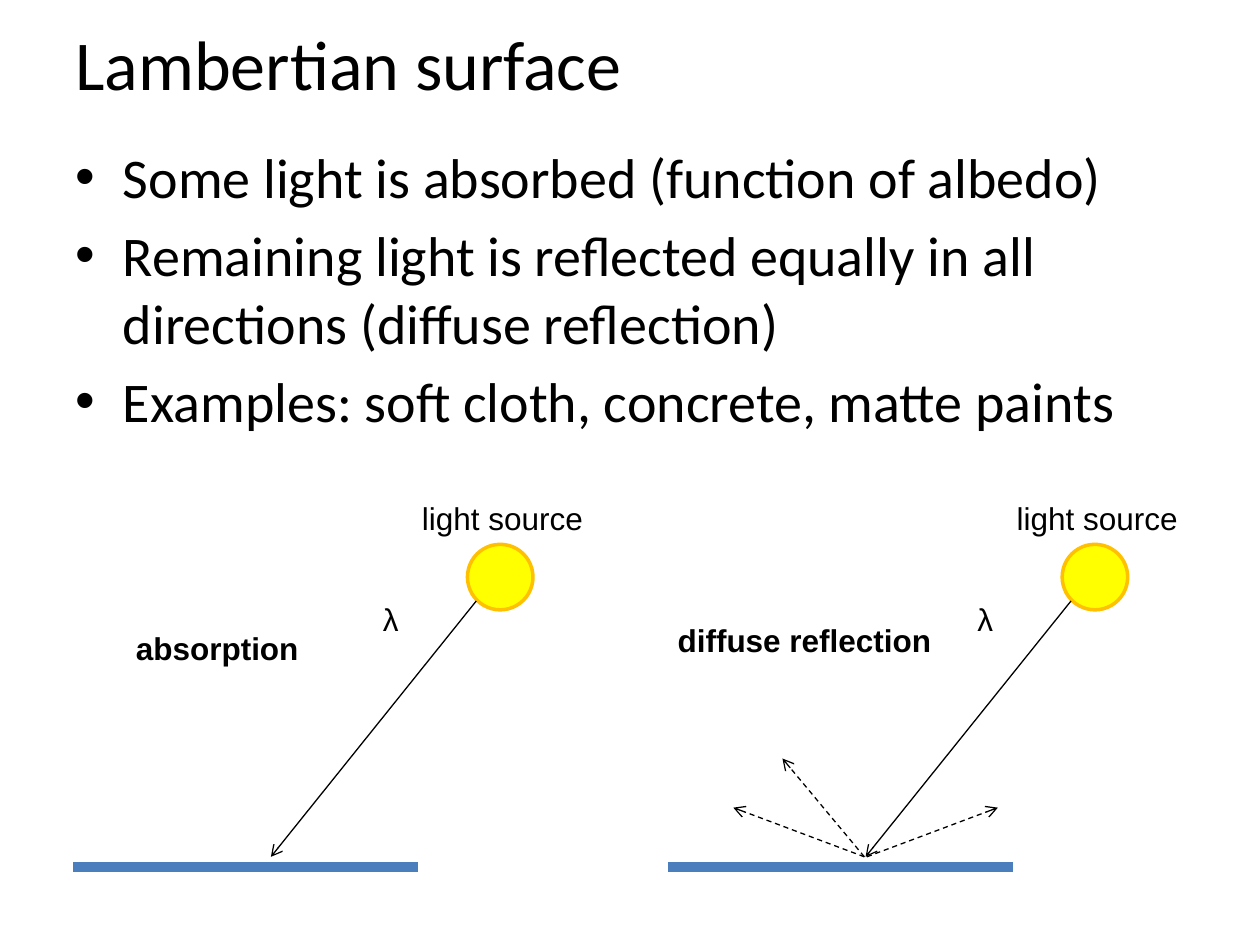
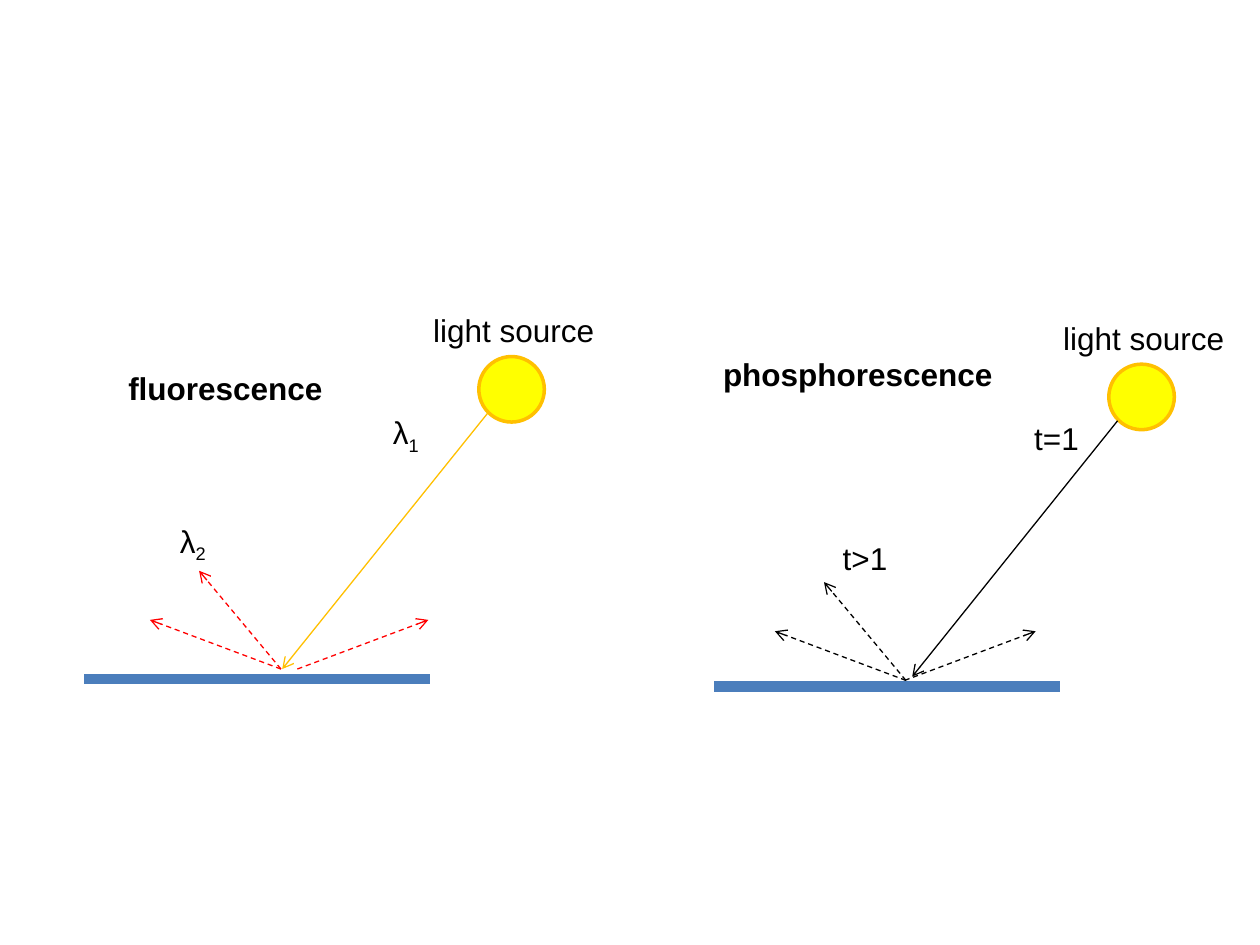
from lxml.etree import SubElement
from pptx import Presentation
from pptx.dml.color import RGBColor
from pptx.enum.dml import MSO_LINE
from pptx.enum.shapes import MSO_CONNECTOR, MSO_SHAPE
from pptx.enum.text import MSO_ANCHOR, PP_ALIGN
from pptx.oxml.ns import qn
from pptx.util import Inches, Pt

BLACK = RGBColor(0x00, 0x00, 0x00)
RED = RGBColor(0xFF, 0x00, 0x00)
AMBER = RGBColor(0xFF, 0xC0, 0x00)
YELLOW = RGBColor(0xFF, 0xFF, 0x00)
BLUE = RGBColor(0x4B, 0x7E, 0xBC)

TITLE_ONLY_BODY, BLANK = 1, 6


class Deck:
    """Holds the shared style and draws elements on the current slide."""

    def __init__(self):
        self.prs = Presentation()
        self.prs.slide_width, self.prs.slide_height = Inches(10), Inches(7.5)
        self.s = None

    def add_slide(self, layout):
        self.s = self.prs.slides.add_slide(self.prs.slide_layouts[layout])

    def style(self, p, size, font, bold=False):
        for r in p.runs:
            r.font.size, r.font.name, r.font.bold = Pt(size), font, bold
            r.font.color.rgb = BLACK

    def place(self, sp, x, y, w, h):
        sp.left, sp.top, sp.width, sp.height = map(Inches, (x, y, w, h))

    def title(self, text):
        sp = self.s.shapes.title
        self.place(sp, 0.5, 0, 9, 1)
        tf = sp.text_frame
        tf.text = text
        tf.vertical_anchor = MSO_ANCHOR.MIDDLE
        p = tf.paragraphs[0]
        p.alignment = PP_ALIGN.LEFT
        self.style(p, 40, "Calibri")

    def bullets(self, items):
        sp = self.s.placeholders[1]
        self.place(sp, 0.5, 1.08, 9, 5.62)
        tf = sp.text_frame
        tf.text = "\n".join(items)
        tf.paragraphs[0].space_before = Pt(0)
        for p in tf.paragraphs:
            self.style(p, 32, "Calibri")

    def label(self, text, x, y, w, bold=False, sub=""):
        sp = self.s.shapes.add_textbox(*map(Inches, (x, y, w, 0.4)))
        tf = sp.text_frame
        tf.word_wrap = False
        p = tf.paragraphs[0]
        p.text = text
        if sub:
            r = p.add_run()
            r.text = sub
            r._r.get_or_add_rPr().set("baseline", "-25000")
        self.style(p, 18, "Arial", bold)

    def line(self, start, end, color, width):
        sp = self.s.shapes.add_connector(
            MSO_CONNECTOR.STRAIGHT, *map(Inches, (*start, *end)))
        sp.line.color.rgb, sp.line.width = color, Pt(width)
        SubElement(sp._element.spPr, qn("a:effectLst"))
        return sp

    def arrow(self, start, end, color=BLACK, dashed=False):
        sp = self.line(start, end, color, 0.75)
        if dashed:
            sp.line.dash_style = MSO_LINE.DASH
        SubElement(sp.line._get_or_add_ln(), qn("a:tailEnd"), type="arrow")

    def sun(self, x, y):
        sp = self.s.shapes.add_shape(
            MSO_SHAPE.OVAL, *map(Inches, (x, y, 0.52, 0.52)))
        sp.shadow.inherit = False
        sp.fill.solid()
        sp.fill.fore_color.rgb = YELLOW
        sp.line.color.rgb, sp.line.width = AMBER, Pt(2)

    def lit_surface(self, x, y, ray=BLACK):
        self.line((x, y), (x + 2.74, y), BLUE, 6)
        self.sun(x + 3.13, y - 2.56)
        self.arrow((x + 3.2, y - 2.11), (x + 1.57, y - 0.08), ray)
        self.label("light source", x + 2.67, y - 2.97, 1.5)

    def reflections(self, x, y, shift, color=BLACK):
        for offset, dx, dy in ((0, -0.65, -0.78), (0, -1.04, -0.39),
                               (shift, 1.04, -0.39)):
            start = x + offset
            self.arrow((start, y), (start + dx, y + dy), color, dashed=True)


def main():
    deck = Deck()

    deck.add_slide(TITLE_ONLY_BODY)
    deck.title("Lambertian surface")
    deck.bullets([
        "Some light is absorbed (function of albedo)",
        "Remaining light is reflected equally in all directions "
        "(diffuse reflection)",
        "Examples: soft cloth, concrete, matte paints",
    ])
    for x in (0.58, 5.3):
        deck.lit_surface(x, 6.88)
        deck.label("λ", x + 2.36, 4.71, 0.34)
    deck.reflections(6.86, 6.8, 0.02)
    deck.label("absorption", 0.98, 4.94, 1.51, bold=True)
    deck.label("diffuse reflection", 5.28, 4.88, 2.24, bold=True)

    deck.add_slide(BLANK)
    deck.lit_surface(0.67, 5.39, AMBER)
    deck.reflections(2.23, 5.31, 0.13, RED)
    deck.label("λ", 3.02, 3.23, 0.42, sub="1")
    deck.label("λ", 1.33, 4.09, 0.42, sub="2")
    deck.label("fluorescence", 0.92, 2.88, 1.76, bold=True)
    deck.lit_surface(5.67, 5.45)
    deck.reflections(7.19, 5.4, -0.01)
    deck.label("t=1", 8.11, 3.28, 0.56)
    deck.label("t>1", 6.59, 4.23, 0.56)
    deck.label("phosphorescence", 5.64, 2.77, 2.36, bold=True)

    deck.prs.save("out.pptx")


if __name__ == "__main__":
    main()
